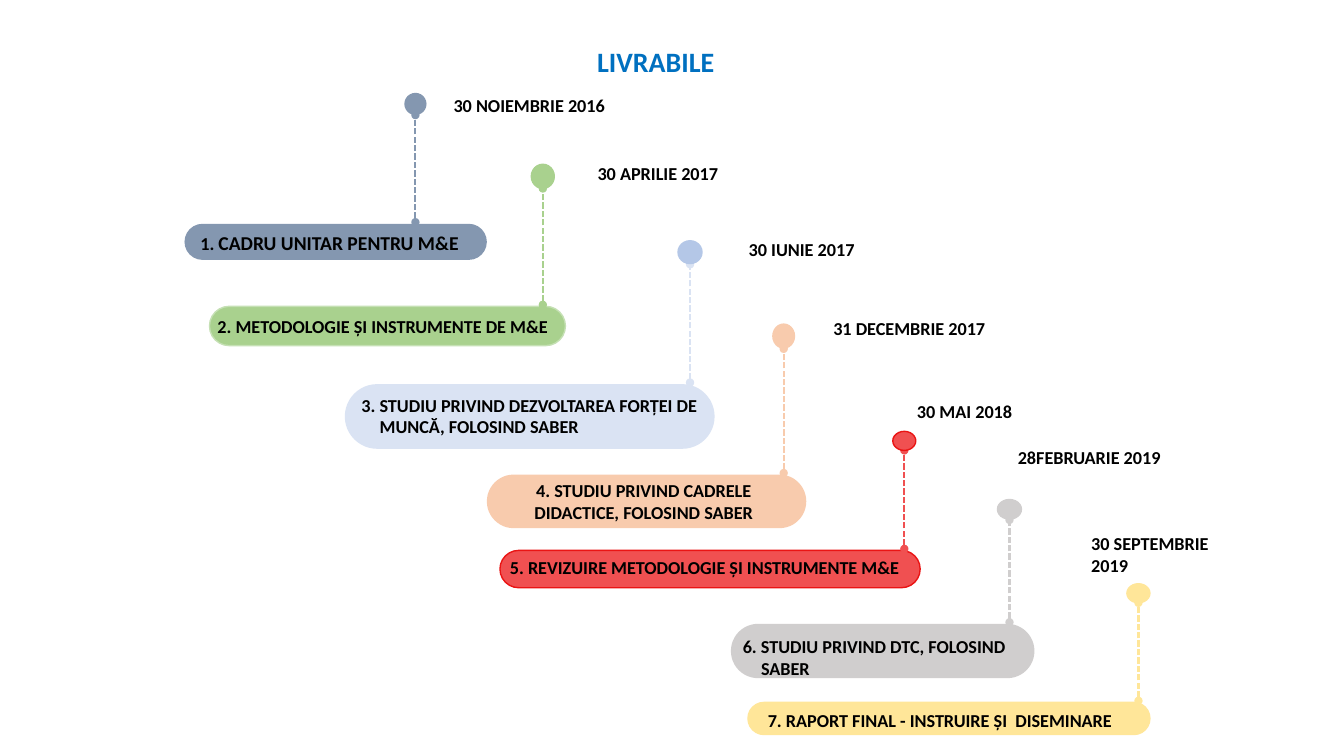
from dataclasses import dataclass
from typing import NamedTuple

from lxml import etree
from pptx import Presentation
from pptx.dml.color import RGBColor
from pptx.enum.dml import MSO_LINE
from pptx.enum.shapes import MSO_CONNECTOR, MSO_SHAPE
from pptx.enum.text import MSO_ANCHOR, MSO_AUTO_SIZE, PP_ALIGN
from pptx.oxml.ns import qn
from pptx.shapes.autoshape import Shape
from pptx.slide import Slide
from pptx.text.text import _Paragraph
from pptx.util import Cm, Pt

ELLIPSE, PILL = MSO_SHAPE.OVAL, MSO_SHAPE.ROUNDED_RECTANGLE
STRAIGHT = MSO_CONNECTOR.STRAIGHT
DASH = MSO_LINE.SQUARE_DOT
CENTER, LEFT = PP_ALIGN.CENTER, PP_ALIGN.LEFT
TOP, MIDDLE = MSO_ANCHOR.TOP, MSO_ANCHOR.MIDDLE
NO_FIT, GROW = MSO_AUTO_SIZE.NONE, MSO_AUTO_SIZE.SHAPE_TO_FIT_TEXT


@dataclass(frozen=True)
class Theme:
    font: str = "Calibri"
    title_size: float = 20
    text_size: float = 13
    large_size: float = 14
    outline: float = 1
    stem: float = 1.5
    title: str = "0070C0"
    text: str = "000000"
    slate: str = "8497B0"
    green: str = "A9D18E"
    light_green: str = "C5E0B4"
    pale_blue: str = "DAE3F3"
    blue: str = "B4C7E7"
    peach: str = "F8CBAD"
    red: str = "F05051"
    dark_red: str = "EA1414"
    grey: str = "D0CECE"
    yellow: str = "FFE699"


THEME = Theme()
STEM_GAP = 0.04  # cm between a stem's foot and its pill
HANGING = 0.46  # cm


class Box(NamedTuple):
    """Left, top, width and height in centimetres."""
    left: float
    top: float
    width: float
    height: float

    def lengths(self) -> tuple[Cm, ...]:
        return tuple(Cm(value) for value in self)


@dataclass(frozen=True)
class Deliverable:
    number: str
    name: str
    date: str
    pill: Box
    dot: Box
    label: Box
    date_box: Box
    color: str
    dot_color: str = ""
    pill_line: str = ""
    dot_line: str = ""
    name_size: float = THEME.text_size
    align: PP_ALIGN = LEFT
    hanging: bool = False
    wrap_label: bool = True
    wrap_date: bool = False


DELIVERABLES = [
    Deliverable("1. ", "CADRU UNITAR PENTRU M&E", "30 NOIEMBRIE 2016",
                Box(4.65, 5.64, 7.62, 0.91), Box(10.19, 2.34, 0.56, 0.56),
                Box(4.8, 5.69, 7.11, 0.86), Box(11.18, 2.26, 4.39, 0.81),
                THEME.slate, name_size=THEME.large_size, wrap_label=False),
    Deliverable("2. ", "METODOLOGIE ȘI INSTRUMENTE DE M&E", "30 APRILIE 2017",
                Box(5.28, 7.72, 8.97, 0.99), Box(13.39, 4.14, 0.58, 0.61),
                Box(5.23, 7.82, 9.53, 0.81), Box(14.81, 3.96, 3.61, 0.81),
                THEME.green, pill_line=THEME.light_green, dot_line=THEME.green),
    Deliverable("3. ", "STUDIU PRIVIND DEZVOLTAREA FORȚEI DE MUNCĂ, FOLOSIND SABER",
                "30 IUNIE 2017",
                Box(8.69, 9.68, 9.32, 1.63), Box(17.07, 6.05, 0.64, 0.61),
                Box(8.86, 9.8, 9.42, 1.37), Box(18.62, 5.89, 3.23, 0.81),
                THEME.pale_blue, dot_color=THEME.blue, hanging=True),
    Deliverable("4. ", "STUDIU PRIVIND CADRELE DIDACTICE, FOLOSIND SABER",
                "31 DECEMBRIE 2017",
                Box(12.27, 11.96, 8.05, 1.35), Box(19.46, 8.15, 0.58, 0.64),
                Box(12.37, 11.96, 7.7, 1.37), Box(20.75, 7.87, 4.39, 0.81),
                THEME.peach, align=CENTER),
    Deliverable("5. ", "REVIZUIRE METODOLOGIE ȘI INSTRUMENTE M&E", "30 MAI 2018",
                Box(12.6, 13.87, 10.59, 0.94), Box(22.5, 10.87, 0.58, 0.48),
                Box(12.6, 13.89, 11.23, 0.81), Box(22.86, 9.96, 2.95, 0.81),
                THEME.red, pill_line=THEME.dark_red, dot_line=THEME.dark_red),
    Deliverable("6. ", "STUDIU PRIVIND DTC, FOLOSIND SABER", "28FEBRUARIE 2019",
                Box(18.42, 15.72, 7.65, 1.37), Box(25.12, 12.57, 0.64, 0.53),
                Box(18.47, 15.88, 8.05, 1.37), Box(25.4, 11.13, 4.24, 0.81),
                THEME.grey, hanging=True, wrap_date=True),
    Deliverable("7. ", "RAPORT FINAL - INSTRUIRE ȘI  DISEMINARE", "30 SEPTEMBRIE 2019",
                Box(18.85, 17.7, 10.13, 0.81), Box(28.4, 14.71, 0.58, 0.48),
                Box(19.1, 17.75, 10.16, 0.81), Box(27.25, 13.28, 3.96, 1.37),
                THEME.yellow, pill_line=THEME.yellow, dot_line=THEME.yellow,
                wrap_date=True),
]


def add_run(paragraph: _Paragraph, text: str, size: float, color: str) -> None:
    run = paragraph.add_run()
    run.text = text
    run.font.name = THEME.font
    run.font.size = Pt(size)
    run.font.bold = True
    run.font.color.rgb = RGBColor.from_string(color)


def add_title(slide: Slide, text: str) -> None:
    title = slide.shapes.title
    title.left, title.top, title.width, title.height = Box(8.69, 0.81, 15.67, 1.45).lengths()
    frame = title.text_frame
    frame.auto_size = NO_FIT
    frame.vertical_anchor = MIDDLE
    frame.margin_left = frame.margin_right = 0
    heading = frame.paragraphs[0]
    heading.alignment = CENTER
    add_run(heading, text, THEME.title_size, THEME.title)


def add_filled(slide: Slide, kind: MSO_SHAPE, box: Box, color: str, outline: str) -> Shape:
    shape = slide.shapes.add_shape(kind, *box.lengths())
    shape.shadow.inherit = False
    shape.fill.solid()
    shape.fill.fore_color.rgb = RGBColor.from_string(color)
    if outline:
        shape.line.color.rgb = RGBColor.from_string(outline)
        shape.line.width = Pt(THEME.outline)
    else:
        shape.line.fill.background()
    return shape


def add_stem(slide: Slide, pill: Box, dot: Box, color: str) -> None:
    x = Cm(dot.left + dot.width / 2)
    stem = slide.shapes.add_connector(
        STRAIGHT, x, Cm(pill.top - STEM_GAP), x, Cm(dot.top + dot.height))
    stem.line.color.rgb = RGBColor.from_string(color)
    stem.line.width = Pt(THEME.stem)
    stem.line.dash_style = DASH
    line = stem.line._get_or_add_ln()
    for end in ("a:headEnd", "a:tailEnd"):
        etree.SubElement(line, qn(end), type="oval")
    etree.SubElement(stem._element.spPr, qn("a:effectLst"))


def add_text(slide: Slide, box: Box, wrap: bool, align: PP_ALIGN = LEFT) -> _Paragraph:
    frame = slide.shapes.add_textbox(*box.lengths()).text_frame
    frame.word_wrap = wrap
    frame.auto_size = GROW
    frame.vertical_anchor = TOP
    paragraph = frame.paragraphs[0]
    paragraph.alignment = align
    return paragraph


def add_deliverable(slide: Slide, item: Deliverable) -> None:
    # Pill, stem and dot
    pill = add_filled(slide, PILL, item.pill, item.color, item.pill_line)
    pill.adjustments[0] = 0.5
    add_stem(slide, item.pill, item.dot, item.color)
    add_filled(slide, ELLIPSE, item.dot, item.dot_color or item.color, item.dot_line)

    # Numbered name
    name = add_text(slide, item.label, item.wrap_label, item.align)
    if item.hanging:
        properties = name._p.get_or_add_pPr()
        properties.set("marL", str(Cm(HANGING)))
        properties.set("indent", str(-Cm(HANGING)))
    add_run(name, item.number, THEME.text_size, THEME.text)
    add_run(name, item.name, item.name_size, THEME.text)

    # Due date
    date = add_text(slide, item.date_box, item.wrap_date)
    add_run(date, item.date, THEME.text_size, THEME.text)


def main() -> None:
    deck = Presentation()
    deck.slide_width, deck.slide_height = Cm(33.87), Cm(19.05)
    slide = deck.slides.add_slide(deck.slide_layouts[5])
    add_title(slide, "LIVRABILE")
    for item in DELIVERABLES:
        add_deliverable(slide, item)
    deck.save("out.pptx")


if __name__ == "__main__":
    main()
